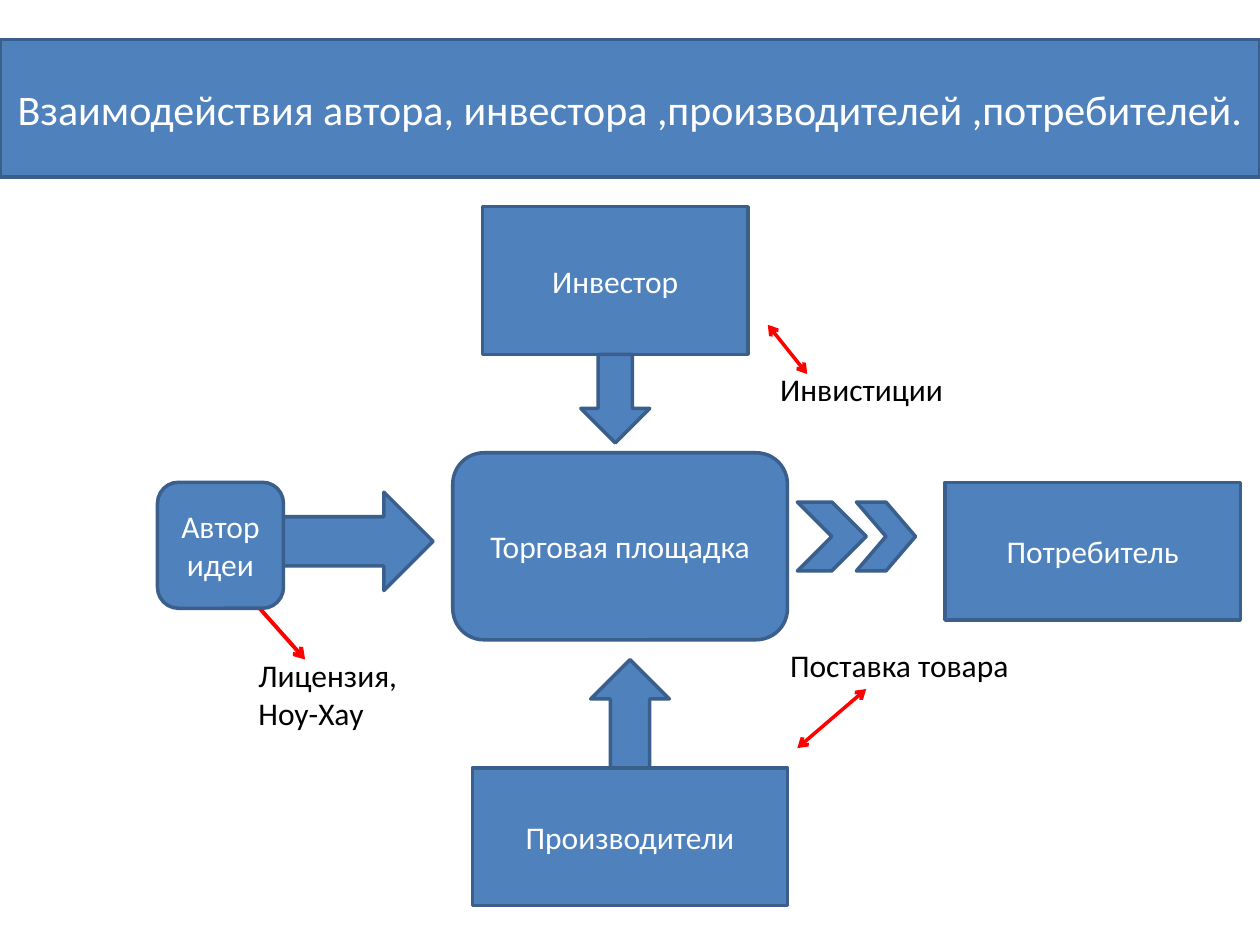
from lxml.etree import SubElement
from pptx import Presentation
from pptx.dml.color import RGBColor
from pptx.enum.shapes import MSO_CONNECTOR, MSO_SHAPE
from pptx.enum.text import MSO_ANCHOR, MSO_AUTO_SIZE, PP_ALIGN
from pptx.oxml.ns import qn
from pptx.util import Pt

PX = 914400 // 128


def px(*lengths):
    return [round(length * PX) for length in lengths]


def color(hex_code):
    return RGBColor.from_string(hex_code)


class Diagram:
    font = "Calibri"
    fill = "4F81BD"
    outline = "3A5F8C"
    light = "FFFFFF"
    dark = "000000"
    accent = "FF0000"

    def __init__(self, slide):
        self.slide = slide

    def set_text(self, shape, text, size, hex_code, align):
        frame = shape.text_frame
        frame.text = text
        for paragraph in frame.paragraphs:
            paragraph.alignment = align
            for run in paragraph.runs:
                run.font.name = self.font
                run.font.size = Pt(size)
                run.font.color.rgb = color(hex_code)

    def paint(self, shape):
        shape.fill.solid()
        shape.fill.fore_color.rgb = color(self.fill)
        shape.line.color.rgb = color(self.outline)
        shape.line.width = Pt(2)

    def title(self, text, *box):
        heading = self.slide.shapes.title
        heading.left, heading.top, heading.width, heading.height = px(*box)
        self.paint(heading)
        self.set_text(heading, text, 24, self.light, PP_ALIGN.CENTER)
        heading.text_frame.auto_size = MSO_AUTO_SIZE.NONE
        heading.text_frame.vertical_anchor = MSO_ANCHOR.MIDDLE

    def block(self, kind, *box, text=""):
        block = self.slide.shapes.add_shape(kind, *px(*box))
        block.shadow.inherit = False
        self.paint(block)
        if text:
            self.set_text(block, text, 18, self.light, PP_ALIGN.CENTER)
            block.text_frame.vertical_anchor = MSO_ANCHOR.MIDDLE

    def label(self, text, *box):
        label = self.slide.shapes.add_textbox(*px(*box))
        self.set_text(label, text, 18, self.dark, PP_ALIGN.LEFT)
        label.text_frame.word_wrap = False
        label.text_frame.auto_size = MSO_AUTO_SIZE.SHAPE_TO_FIT_TEXT

    def pointer(self, *ends, width=2):
        pointer = self.slide.shapes.add_connector(MSO_CONNECTOR.STRAIGHT, *px(*ends))
        pointer.line.color.rgb = color(self.accent)
        pointer.line.width = Pt(width)
        outline = pointer.line._get_or_add_ln()
        for end in ("a:headEnd", "a:tailEnd"):
            SubElement(outline, qn(end), type="arrow")
        SubElement(outline.getparent(), qn("a:effectLst"))


def main():
    presentation = Presentation()
    presentation.slide_width, presentation.slide_height = px(1280, 960)
    diagram = Diagram(presentation.slides.add_slide(presentation.slide_layouts[5]))

    diagram.title(
        "Взаимодействия автора, инвестора ,производителей ,потребителей.",
        0, 40, 1280, 140,
    )
    diagram.block(MSO_SHAPE.FLOWCHART_ALTERNATE_PROCESS, 460, 460, 340, 190,
                  text="Торговая площадка")
    diagram.block(MSO_SHAPE.NOTCHED_RIGHT_ARROW, 260, 500, 180, 100)
    diagram.block(MSO_SHAPE.RECTANGLE, 490, 210, 270, 150, text="Инвестор")
    diagram.block(MSO_SHAPE.DOWN_ARROW, 590, 360, 70, 90)

    diagram.label("Лицензия,\nНоу-Хау", 250, 660, 168, 91)
    diagram.pointer(230, 580, 310, 670, width=2.25)
    diagram.label("Инвистиции", 780, 370, 201, 51)
    diagram.pointer(820, 380, 780, 330)

    diagram.block(MSO_SHAPE.ROUNDED_RECTANGLE, 160, 490, 128, 128, text="Автор\nидеи")
    diagram.block(MSO_SHAPE.RECTANGLE, 480, 780, 320, 140, text="Производители")
    diagram.block(MSO_SHAPE.UP_ARROW, 600, 670, 80, 110)

    diagram.label("Поставка товара", 790, 650, 251, 91)
    diagram.pointer(810, 760, 880, 700)

    for left, width in ((810, 70), (870, 60)):
        diagram.block(MSO_SHAPE.CHEVRON, left, 510, width, 70)
    diagram.block(MSO_SHAPE.RECTANGLE, 960, 490, 300, 140, text="Потребитель")

    presentation.save("out.pptx")


if __name__ == "__main__":
    main()
